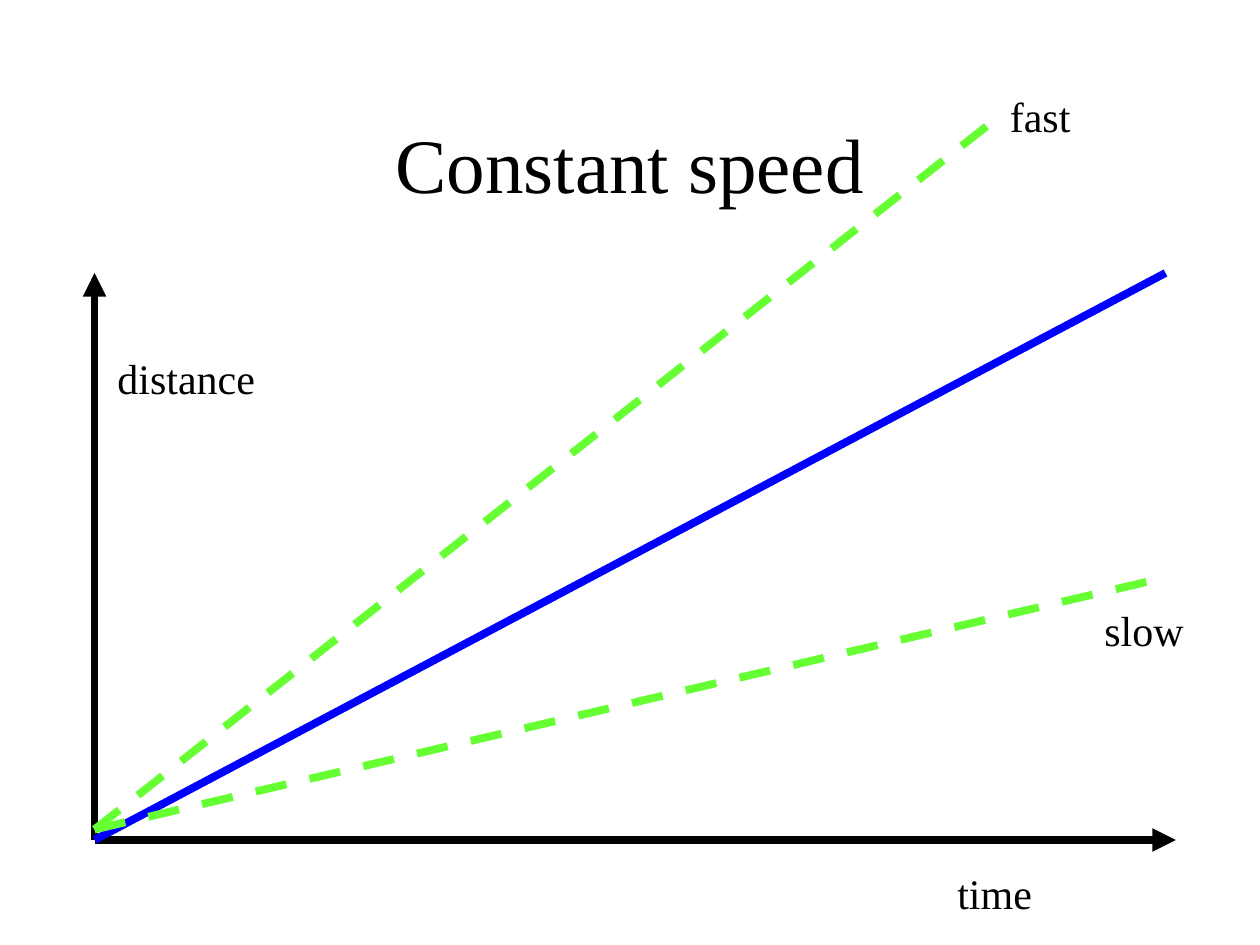
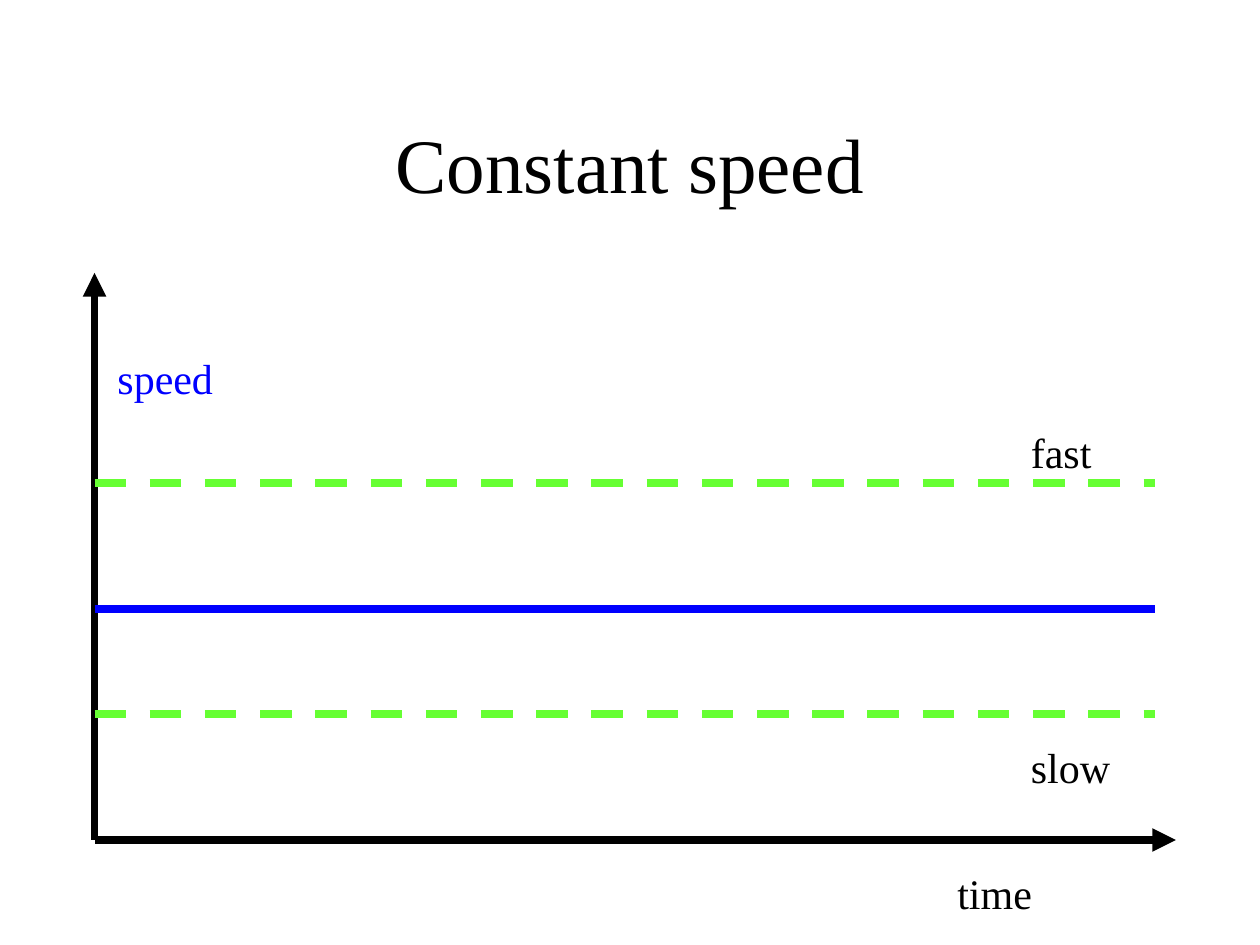
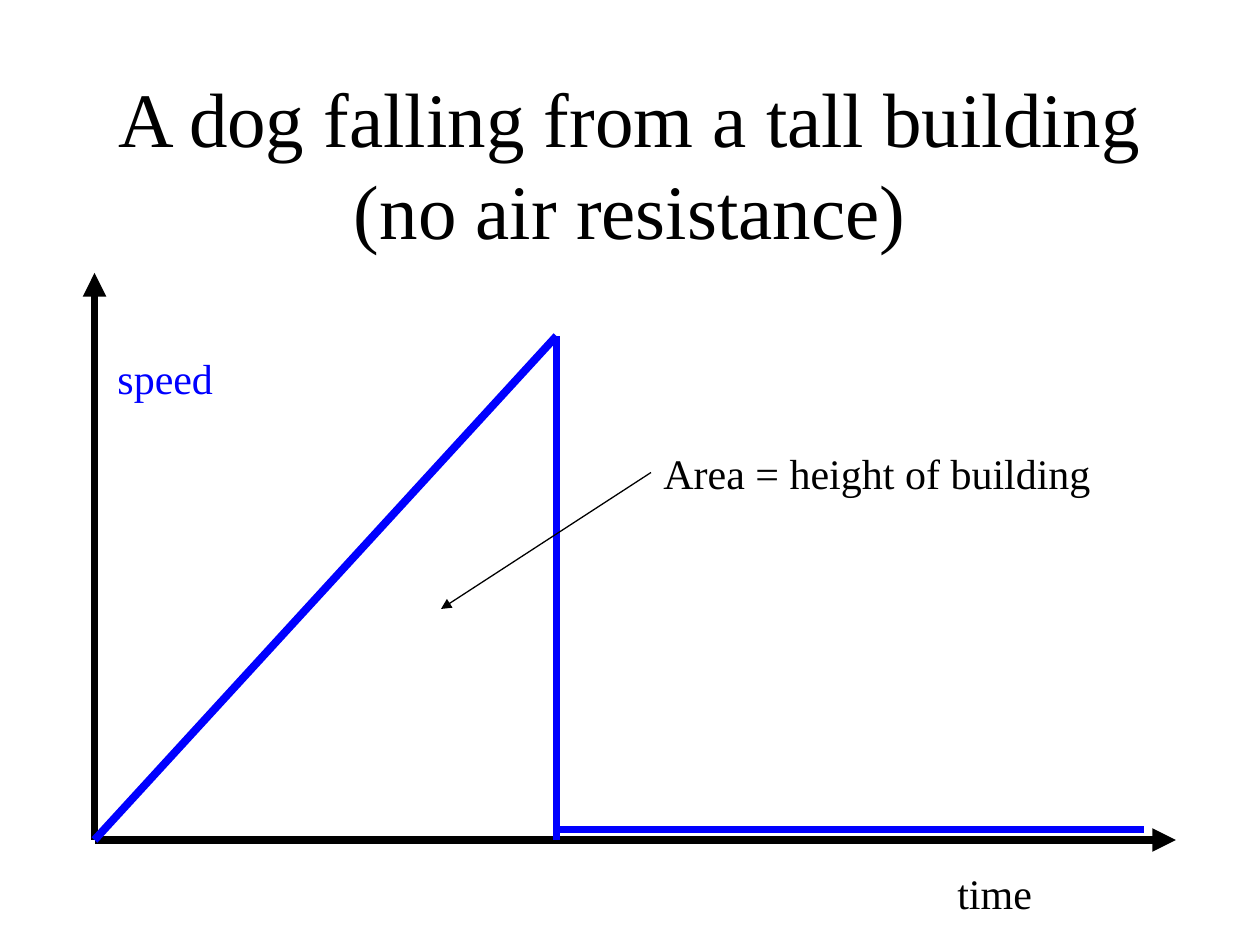
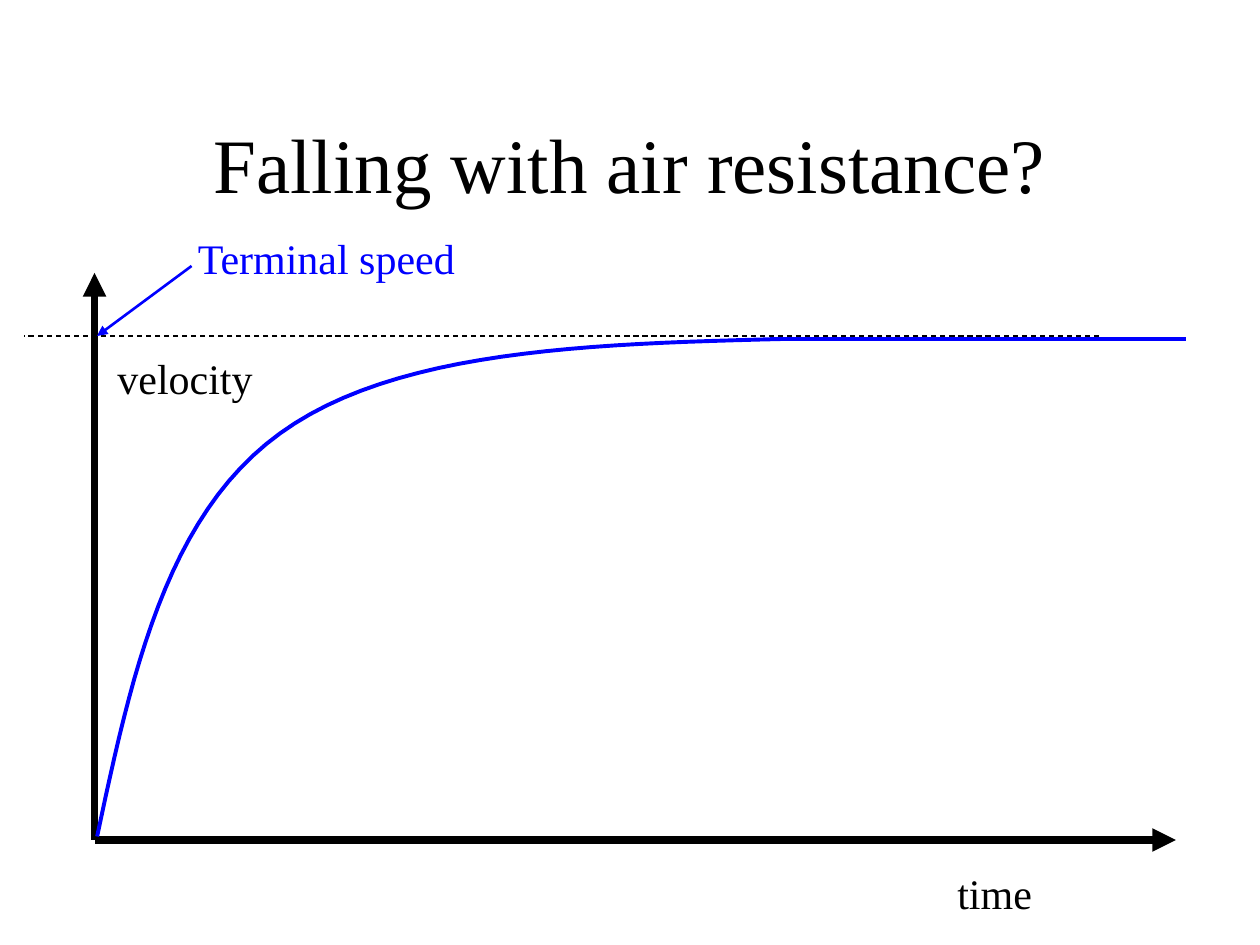
"""Build four motion graph slides that share one pair of axes."""
from pptx import Presentation
from pptx.dml.color import RGBColor as Rgb
from pptx.enum.dml import MSO_LINE as Dash
from pptx.enum.shapes import MSO_CONNECTOR as Link
from pptx.enum.text import MSO_ANCHOR as Anchor, MSO_AUTO_SIZE as Fit, PP_ALIGN as Align
from pptx.oxml.ns import qn
from pptx.util import Pt
from lxml.etree import SubElement as Sub

HUES = {"ink": "000000", "blue": "0000FF", "green": "66FF33"}
FONT = "Times New Roman"
LEFT, BASE = 54, 480


def write(shape, text, size=24, hue="ink", align=Align.LEFT, anchor=Anchor.TOP, fit=Fit.SHAPE_TO_FIT_TEXT):
    frame = shape.text_frame
    frame.word_wrap = True
    frame.auto_size = fit
    frame.vertical_anchor = anchor
    para = frame.paragraphs[0]
    para.alignment = align
    run = para.add_run()
    run.text = text
    run.font.name = FONT
    run.font.size = Pt(size)
    run.font.color.rgb = Rgb.from_string(HUES[hue])


def draw(slide, ends, hue="ink", width=4.5, dash=False, arrow=False):
    line = slide.shapes.add_connector(Link.STRAIGHT, *[Pt(v) for v in ends])
    line.line.color.rgb = Rgb.from_string(HUES[hue])
    line.line.width = Pt(width)
    if dash:
        line.line.dash_style = Dash.DASH
    if arrow:
        Sub(line.line._get_or_add_ln(), qn("a:tailEnd"), type="triangle")
    Sub(line._element.spPr, qn("a:effectLst"))


dashed = {"hue": "green", "dash": True}
solid = {"hue": "blue"}
thin = {"width": 0.75}

pages = [
    {
        "title": "Constant speed",
        "axis": ("distance", "ink"),
        "lines": [
            ((LEFT, BASE, 666, 156), solid),
            ((LEFT, 474, 564, 72), dashed),
            ((LEFT, 474, 666, 330), dashed),
        ],
        "notes": [("fast", (570, 48, 96), "ink"), ("slow", (624, 342, 96), "ink")],
    },
    {
        "title": "Constant speed",
        "axis": ("speed", "blue"),
        "lines": [
            ((LEFT, 348, 660, 348), solid),
            ((LEFT, 276, 660, 276), dashed),
            ((LEFT, 408, 660, 408), dashed),
        ],
        "notes": [("fast", (582, 240, 78), "ink"), ("slow", (582, 420, 78), "ink")],
    },
    {
        "title": "A dog falling from a tall building (no air resistance)",
        "axis": ("speed", "blue"),
        "lines": [
            ((LEFT, BASE, 318, 192), solid),
            ((318, BASE, 318, 192), solid),
            ((318, 474, 654, 474), solid),
            ((372, 270, 252, 348), {**thin, "arrow": True}),
        ],
        "notes": [("Area = height of building", (372, 252, 300), "ink")],
    },
    {
        "title": "Falling with air resistance?",
        "axis": ("velocity", "ink"),
        "lines": [
            ((440, 193.7, 678, 193.7), {"hue": "blue", "width": 2.25}),
            ((628, 192, 14, 192), {**thin, "dash": True}),
            ((109.5, 152, 55.5, 192), {"hue": "blue", "width": 1.5, "arrow": True}),
        ],
        "notes": [("Terminal speed", (106, 129.6, 417.6), "blue")],
    },
]

deck = Presentation()
deck.slide_width, deck.slide_height = Pt(720), Pt(540)

for page in pages:
    slide = deck.slides.add_slide(deck.slide_layouts[5])
    title = slide.shapes.title
    title.left, title.top, title.width, title.height = Pt(54), Pt(48), Pt(612), Pt(90)
    write(title, page["title"], size=44, align=Align.CENTER, anchor=Anchor.MIDDLE, fit=Fit.NONE)

    draw(slide, (LEFT, BASE, LEFT, 156), arrow=True)
    draw(slide, (LEFT, BASE, 672, BASE), arrow=True)
    for ends, look in page["lines"]:
        draw(slide, ends, **look)

    name, tint = page["axis"]
    notes = [(name, (60, 198, 120), tint), ("time", (540, 492, 108), "ink")] + page["notes"]
    for text, (x, y, wide), hue in notes:
        box = slide.shapes.add_textbox(Pt(x), Pt(y), Pt(wide), Pt(36))
        write(box, text, hue=hue)

bends = [
    [(55.5, 478), (75, 386.5), (94.5, 295), (160, 247.7)],
    [(160, 247.7), (225.5, 200), (336, 196.5), (447.8, 193.7)],
]
steps = 24
dots = []
for a, b, c, d in bends:
    for i in range(1, steps + 1):
        t = i / steps
        u = 1 - t
        mix = (u**3, 3 * u * u * t, 3 * u * t * t, t**3)
        dots.append(tuple(Pt(sum(m * p[k] for m, p in zip(mix, (a, b, c, d)))) for k in (0, 1)))

start = bends[0][0]
path = slide.shapes.build_freeform(Pt(start[0]), Pt(start[1]))
path.add_line_segments(dots, close=False)
curve = path.convert_to_shape()
curve.shadow.inherit = False
curve.fill.background()
curve.line.color.rgb = Rgb.from_string(HUES["blue"])
curve.line.width = Pt(2.25)

deck.save("out.pptx")
